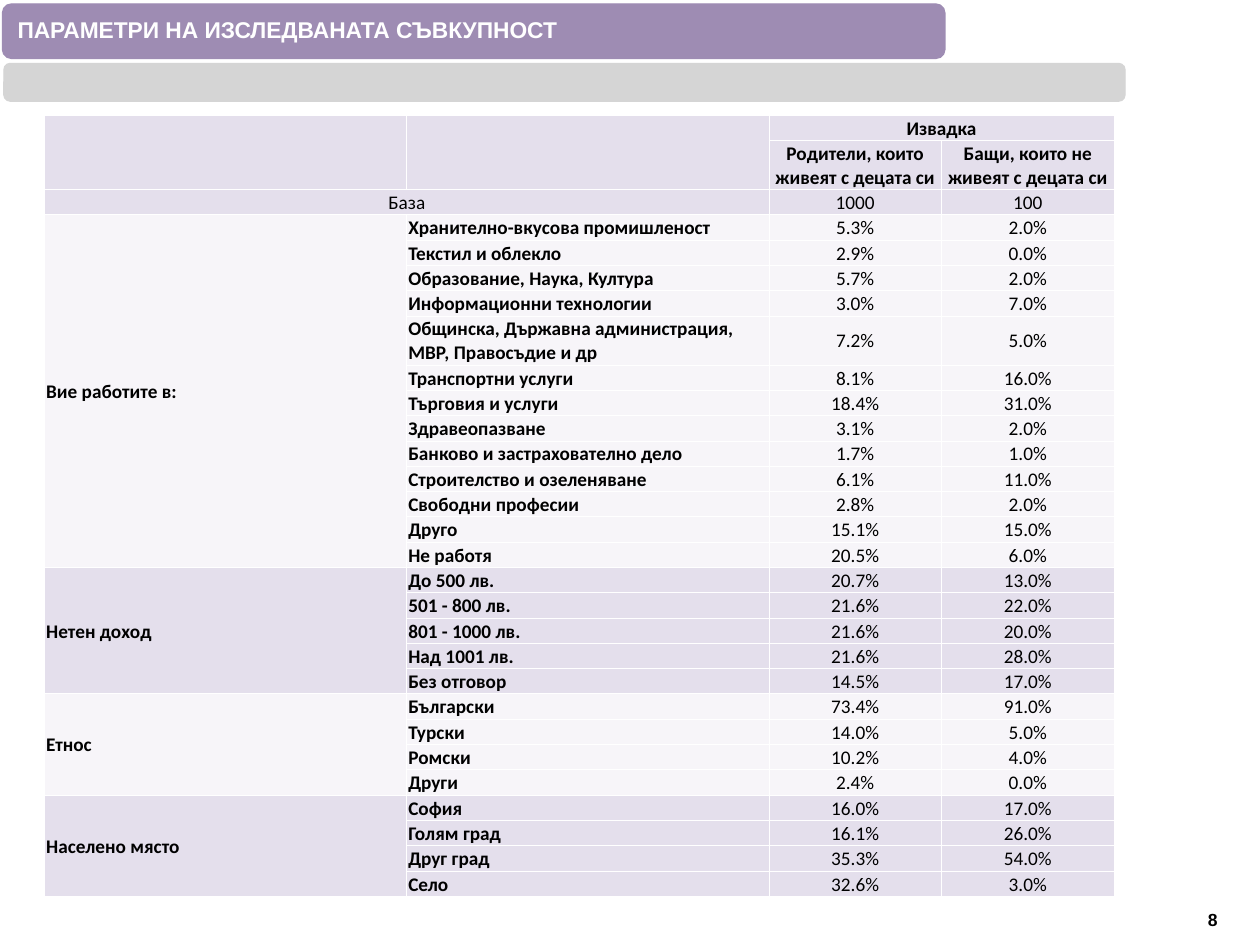
from dataclasses import dataclass

from lxml import etree
from pptx import Presentation
from pptx.dml.color import RGBColor
from pptx.enum import shapes, text
from pptx.oxml import ns
from pptx.util import Cm, Pt


@dataclass(frozen=True)
class Theme:
    purple: str = "9E8CB3"
    gray: str = "D5D5D5"
    lilac: str = "E4DFEC"
    pale: str = "F7F5F9"
    white: str = "FFFFFF"
    black: str = "000000"
    heading_font: str = "Arial"
    table_font: str = "Calibri"
    title_size: float = 13
    table_size: float = 11
    number_size: float = 10
    border_width: float = 0.5


THEME = Theme()
COLUMN_WIDTHS = (7.3, 7.3, 3.48, 3.48)
ROW_HEIGHT = 0.49
TALL_ROW_HEIGHT = 0.97
HEADER_ROWS = 3

GROUPS = (
    ("Вие работите в:", (
        ("Хранително-вкусова промишленост", "5.3%", "2.0%"),
        ("Текстил и облекло", "2.9%", "0.0%"),
        ("Образование, Наука, Култура", "5.7%", "2.0%"),
        ("Информационни технологии", "3.0%", "7.0%"),
        ("Общинска, Държавна администрация, МВР, Правосъдие и др", "7.2%", "5.0%"),
        ("Транспортни услуги", "8.1%", "16.0%"),
        ("Търговия и услуги", "18.4%", "31.0%"),
        ("Здравеопазване", "3.1%", "2.0%"),
        ("Банково и застрахователно дело", "1.7%", "1.0%"),
        ("Строителство и озеленяване", "6.1%", "11.0%"),
        ("Свободни професии", "2.8%", "2.0%"),
        ("Друго", "15.1%", "15.0%"),
        ("Не работя", "20.5%", "6.0%"),
    )),
    ("Нетен доход", (
        ("До 500 лв.", "20.7%", "13.0%"),
        ("501 - 800 лв.", "21.6%", "22.0%"),
        ("801 - 1000 лв.", "21.6%", "20.0%"),
        ("Над 1001 лв.", "21.6%", "28.0%"),
        ("Без отговор", "14.5%", "17.0%"),
    )),
    ("Етнос", (
        ("Български", "73.4%", "91.0%"),
        ("Турски", "14.0%", "5.0%"),
        ("Ромски", "10.2%", "4.0%"),
        ("Други", "2.4%", "0.0%"),
    )),
    ("Населено място", (
        ("София", "16.0%", "17.0%"),
        ("Голям град", "16.1%", "26.0%"),
        ("Друг град", "35.3%", "54.0%"),
        ("Село", "32.6%", "3.0%"),
    )),
)


def set_font(para, name, size, color, bold):
    font = para.font
    font.name, font.size, font.bold = name, Pt(size), bold
    font.color.rgb = RGBColor.from_string(color)


def add_bar(page, left, top, width, height, color):
    bar = page.shapes.add_shape(
        shapes.MSO_SHAPE.FLOWCHART_ALTERNATE_PROCESS,
        Cm(left), Cm(top), Cm(width), Cm(height))
    bar.shadow.inherit = False
    bar.fill.solid()
    bar.fill.fore_color.rgb = RGBColor.from_string(color)
    bar.line.color.rgb = RGBColor.from_string(color)
    bar.line.width = Pt(0.75)
    return bar


def place_title(page, bar, wording):
    """Put the title placeholder over the bars, in front of the given one."""
    title = page.shapes.title
    bar.element.addnext(title.element)
    title.left, title.top, title.width, title.height = Cm(0.1), Cm(0.15), Cm(22.3), Cm(0.9)
    frame = title.text_frame
    frame.text = wording
    frame.auto_size = text.MSO_AUTO_SIZE.NONE
    frame.vertical_anchor = text.MSO_ANCHOR.MIDDLE
    para = frame.paragraphs[0]
    para.alignment = text.PP_ALIGN.LEFT
    set_font(para, THEME.heading_font, THEME.title_size, THEME.white, True)


def add_page_number(page, number):
    box = page.shapes.add_textbox(Cm(24.1), Cm(18.2), Cm(0.95), Cm(0.68))
    frame = box.text_frame
    frame.word_wrap = True
    frame.text = number
    set_font(frame.paragraphs[0], THEME.heading_font, THEME.number_size, THEME.black, True)


def set_borders(cell):
    properties = cell._tc.get_or_add_tcPr()
    for side in ("a:lnL", "a:lnR", "a:lnT", "a:lnB"):
        line = etree.SubElement(properties, ns.qn(side), w=str(Pt(THEME.border_width)))
        fill = etree.SubElement(line, ns.qn("a:solidFill"))
        etree.SubElement(fill, ns.qn("a:srgbClr"), val=THEME.white)


def fill_cell(cell, wording, color, bold, centered):
    cell.margin_left = cell.margin_right = cell.margin_top = Cm(0.03)
    cell.margin_bottom = 0
    cell.vertical_anchor = text.MSO_ANCHOR.MIDDLE
    set_borders(cell)
    cell.fill.solid()
    cell.fill.fore_color.rgb = RGBColor.from_string(color)
    para = cell.text_frame.paragraphs[0]
    para.alignment = text.PP_ALIGN.CENTER if centered else text.PP_ALIGN.LEFT
    set_font(para, THEME.table_font, THEME.table_size, THEME.black, bold)
    if wording:
        para.add_run().text = wording
    else:
        etree.SubElement(para._p, ns.qn("a:endParaRPr"), sz=str(int(THEME.table_size * 100)))


def fill_header(table):
    rows = (
        ("", "", "Извадка", ""),
        ("", "", "Родители, които живеят с децата си", "Бащи, които не живеят с децата си"),
        ("База", "", "1000", "100"),
    )
    for row, wordings in enumerate(rows):
        for column, wording in enumerate(wordings):
            fill_cell(table.cell(row, column), wording, THEME.lilac, row < 2, True)
    for first, last in (((0, 0), (1, 0)), ((0, 1), (1, 1)), ((0, 2), (0, 3)), ((2, 0), (2, 1))):
        table.cell(*first).merge(table.cell(*last))


def fill_group(table, top, name, answers, color):
    for offset, answer in enumerate(answers):
        label = "" if offset else name
        for column, wording in enumerate((label, *answer)):
            fill_cell(table.cell(top + offset, column), wording, color, column < 2, column >= 2)
    table.cell(top, 0).merge(table.cell(top + len(answers) - 1, 0))


def add_sample_table(page):
    row_count = HEADER_ROWS + sum(len(answers) for _, answers in GROUPS)
    heights = [ROW_HEIGHT] * row_count
    heights[1] = heights[7] = TALL_ROW_HEIGHT
    table = page.shapes.add_table(
        row_count, len(COLUMN_WIDTHS), Cm(0.9), Cm(2.32),
        Cm(sum(COLUMN_WIDTHS)), Cm(sum(heights))).table
    table.first_row = table.horz_banding = False
    for column, width in zip(table.columns, COLUMN_WIDTHS):
        column.width = Cm(width)
    for row, height in zip(table.rows, heights):
        row.height = Cm(height)
    fill_header(table)
    top = HEADER_ROWS
    for index, (name, answers) in enumerate(GROUPS):
        fill_group(table, top, name, answers, THEME.lilac if index % 2 else THEME.pale)
        top += len(answers)


def main():
    deck = Presentation()
    deck.slide_width, deck.slide_height = Cm(25.4), Cm(19.05)
    page = deck.slides.add_slide(deck.slide_layouts.get_by_name("Title Only"))
    add_page_number(page, "8")
    add_bar(page, 0.05, 0.08, 19, 1.1, THEME.purple)
    lower_bar = add_bar(page, 0.08, 1.28, 22.6, 0.76, THEME.gray)
    place_title(page, lower_bar, "ПАРАМЕТРИ НА ИЗСЛЕДВАНАТА СЪВКУПНОСТ")
    add_sample_table(page)
    deck.save("out.pptx")


if __name__ == "__main__":
    main()
